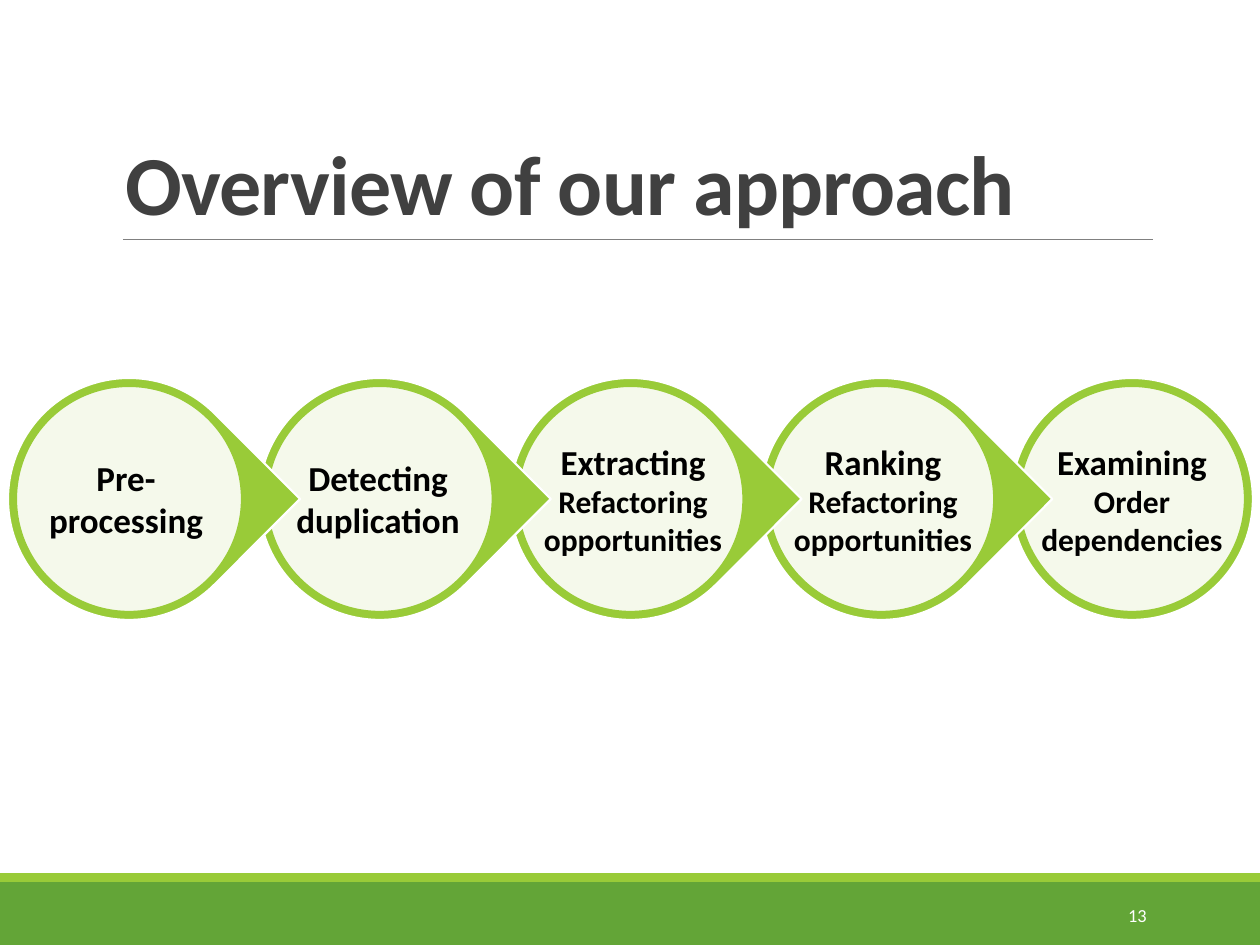
from lxml.etree import SubElement
from pptx import Presentation
from pptx.dml.color import RGBColor
from pptx.enum.shapes import MSO_CONNECTOR, MSO_SHAPE
from pptx.enum.text import MSO_ANCHOR, PP_ALIGN
from pptx.oxml.ns import qn
from pptx.util import Pt

PX = 914400 / 126
FONT = "Calibri"
LIME, GREEN, WHITE = "99CB38", "63A537", "FFFFFF"
STAGES = [
    (126, [("Pre-", 20), ("processing", 20)]),
    (378, [("Detecting", 20), ("duplication", 20)]),
    (633, [("Extracting", 20), ("Refactoring", 18), ("opportunities", 18)]),
    (883, [("Ranking", 20), ("Refactoring", 18), ("opportunities", 18)]),
    (1132, [("Examining", 20), ("Order", 18), ("dependencies", 18)]),
]


def px(*lengths):
    """Turn pixel lengths into EMU."""
    return [round(length * PX) for length in lengths]


def color(hex_code):
    """Return the colour of a hex string."""
    return RGBColor.from_string(hex_code)


def add_run(paragraph, text, size, hex_code, bold=False):
    """Add one formatted run to a paragraph."""
    run = paragraph.add_run()
    run.text = text
    run.font.name, run.font.size, run.font.bold = FONT, Pt(size), bold
    run.font.color.rgb = color(hex_code)
    return run


def add_filled(slide, preset, box, fill, line=None, opacity=None):
    """Add a preset shape with a flat fill and an optional outline."""
    shape = slide.shapes.add_shape(preset, *px(*box))
    shape.shadow.inherit = False
    shape.fill.solid()
    shape.fill.fore_color.rgb = color(fill)
    if opacity is not None:
        srgb = shape.fill._xPr.find(qn("a:solidFill")).find(qn("a:srgbClr"))
        SubElement(srgb, qn("a:alpha"), val=str(opacity * 1000))
    if line:
        shape.line.color.rgb = color(line)
        shape.line.width = Pt(1.25)
    else:
        shape.line.fill.background()
    return shape


def add_text(slide, box, lines, hex_code, align, bold=False):
    """Add a middle-anchored text box with one paragraph per line."""
    frame = slide.shapes.add_textbox(*px(*box)).text_frame
    frame.word_wrap = False
    frame.vertical_anchor = MSO_ANCHOR.MIDDLE
    for index, (text, size) in enumerate(lines):
        paragraph = frame.add_paragraph() if index else frame.paragraphs[0]
        paragraph.alignment = align
        add_run(paragraph, text, size, hex_code, bold)


def add_heading(slide, left, top, width, height):
    """Place the title and the rule under it."""
    title = slide.shapes.title
    title.left, title.top, title.width, title.height = px(left, top, width, height)
    title.text_frame.vertical_anchor = MSO_ANCHOR.BOTTOM
    paragraph = title.text_frame.paragraphs[0]
    paragraph.alignment = PP_ALIGN.LEFT
    paragraph.line_spacing = 0.85
    run = add_run(paragraph, "Overview of our approach", 48, "404040", True)
    run.font._element.set("spc", "-50")
    bottom = top + height
    rule = slide.shapes.add_connector(
        MSO_CONNECTOR.STRAIGHT, *px(left + 10, bottom, left + width, bottom))
    rule.line.color.rgb = color("808080")
    rule.line.width = Pt(0.5)
    SubElement(rule._element.spPr, qn("a:effectLst"))


def add_footer(slide, left, top, width, height):
    """Place the two green bands and the slide number."""
    stripe = 9
    add_filled(slide, MSO_SHAPE.RECTANGLE,
               (left, top + stripe, width, height - stripe), GREEN)
    add_filled(slide, MSO_SHAPE.RECTANGLE, (left, top, width, stripe), LIME)
    add_text(slide, (left + 1023, top + 17, 136, 50), [("13", 10.5)],
             WHITE, PP_ALIGN.RIGHT)


def add_process(slide, left, top, width, size):
    """Place the chain of stages, each drop overlapping the next one."""
    ring, label_width = 8, 230
    last = len(STAGES) - 1
    for index in range(last, -1, -1):
        x = left + (width - size) * index / last
        preset = MSO_SHAPE.OVAL if index == last else MSO_SHAPE.TEAR
        drop = add_filled(slide, preset, (x, top, size, size), LIME, WHITE)
        if index < last:
            drop.rotation = 45
        disc = size - 2 * ring
        add_filled(slide, MSO_SHAPE.OVAL, (x + ring, top + ring, disc, disc),
                   WHITE, LIME, 90)
    for center, lines in STAGES:
        add_text(slide, (center - label_width / 2, top, label_width, size),
                 lines, "000000", PP_ALIGN.CENTER, True)


def main():
    """Build and save the slide."""
    deck = Presentation()
    deck.slide_width, deck.slide_height = px(1260, 945)
    slide = deck.slides.add_slide(deck.slide_layouts[5])
    add_footer(slide, 0, 873, 1260, 72)
    add_heading(slide, 113, 39, 1040, 200)
    add_process(slide, 8, 378, 1245, 242)
    deck.save("out.pptx")


if __name__ == "__main__":
    main()
